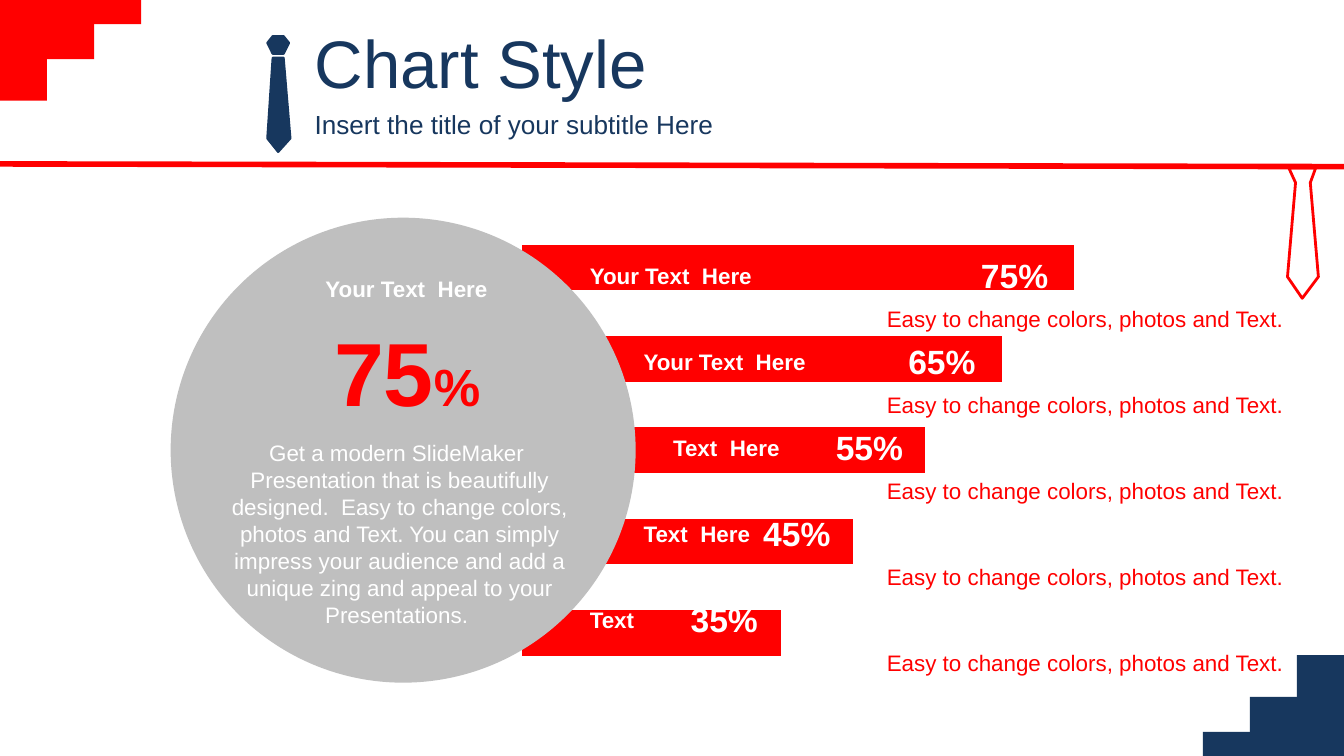
"""Build the chart style slide: a stacked bar chart beside a summary circle."""
from dataclasses import dataclass

from lxml import etree
from pptx import Presentation
from pptx.chart.data import CategoryChartData
from pptx.dml.color import RGBColor
from pptx.enum.chart import XL_CHART_TYPE
from pptx.enum.shapes import MSO_CONNECTOR, MSO_SHAPE
from pptx.enum.text import MSO_ANCHOR, MSO_AUTO_SIZE, PP_ALIGN
from pptx.oxml.ns import qn
from pptx.shapes.autoshape import Shape
from pptx.slide import Slide
from pptx.util import Inches, Pt

LEFT, CENTER = PP_ALIGN.LEFT, PP_ALIGN.CENTER
TOP, MIDDLE = MSO_ANCHOR.TOP, MSO_ANCHOR.MIDDLE
RECTANGLE, OVAL = MSO_SHAPE.RECTANGLE, MSO_SHAPE.OVAL
STRAIGHT = MSO_CONNECTOR.STRAIGHT
BAR_STACKED = XL_CHART_TYPE.BAR_STACKED
NO_AUTOSIZE = MSO_AUTO_SIZE.NONE

COLORS = {"red": "FF0000", "navy": "17375E", "gray": "BFBFBF", "white": "FFFFFF", "black": "000000"}
FONT = "Arial"
SLIDE_WIDTH = 10
SLIDE_HEIGHT = SLIDE_WIDTH * 9 / 16
STEP_WIDTH = 0.35
STEP_HEIGHTS = (0.75, 0.44, 0.18)
ROW_PITCH = 0.64
PERCENT_SHIFT = 0.54
NOTE = "Easy to change colors, photos and Text."
SUMMARY = (
    "Get a modern SlideMaker  Presentation that is beautifully designed.  "
    "Easy to change colors, photos and Text. You can simply impress your "
    "audience and add a unique zing and appeal to your Presentations. "
)
CHART_VALUES = (47, 60, 73, 87, 100)
CHART_LAYOUT = {"xMode": "edge", "yMode": "edge", "x": 0.02, "y": 0.02, "w": 0.9, "h": 0.96}

TIE_KNOT = ((1.99, 0.32), (2.03, 0.27), (2.11, 0.27), (2.15, 0.32), (2.11, 0.4), (2.03, 0.4))
TIE_BLADE = ((2.03, 0.43), (2.11, 0.43), (2.16, 1.03), (2.07, 1.13), (1.99, 1.03))
HANGING_TIE = ((9.59, 1.25), (9.79, 1.25), (9.75, 1.36), (9.81, 2.06),
               (9.69, 2.22), (9.58, 2.06), (9.64, 1.36))


@dataclass(frozen=True)
class Box:
    left: float
    top: float
    width: float
    height: float

    def lengths(self) -> tuple:
        return tuple(Inches(value) for value in (self.left, self.top, self.width, self.height))


@dataclass(frozen=True)
class TextRun:
    text: str
    size: float
    color: str
    bold: bool = False


@dataclass(frozen=True)
class BarRow:
    label: str
    label_left: float
    percent: str


BAR_ROWS = (
    BarRow("Your Text  Here", 4.29, "75%"),
    BarRow("Your Text  Here", 4.69, "65%"),
    BarRow("Text  Here", 4.91, "55%"),
    BarRow("Text  Here", 4.69, "45%"),
    BarRow("Text", 4.29, "35%"),
)


def rgb(name: str) -> RGBColor:
    return RGBColor.from_string(COLORS[name])


def write_text(shape: Shape, runs: tuple, alignment: PP_ALIGN, anchor: MSO_ANCHOR, wrap: bool) -> None:
    frame = shape.text_frame
    frame_format = {"word_wrap": wrap, "auto_size": NO_AUTOSIZE, "vertical_anchor": anchor}
    for name, value in frame_format.items():
        setattr(frame, name, value)
    paragraph = frame.paragraphs[0]
    paragraph.alignment = alignment
    for text_run in runs:
        run = paragraph.add_run()
        run.text = text_run.text
        font_format = {"name": FONT, "size": Pt(text_run.size), "bold": text_run.bold}
        for name, value in font_format.items():
            setattr(run.font, name, value)
        run.font.color.rgb = rgb(text_run.color)


def add_text(slide: Slide, box: Box, *runs: TextRun, alignment: PP_ALIGN = LEFT, wrap: bool = True) -> None:
    write_text(slide.shapes.add_textbox(*box.lengths()), runs, alignment, TOP, wrap)


def fill_placeholder(shape: Shape, box: Box, run: TextRun) -> None:
    for name, value in zip(("left", "top", "width", "height"), box.lengths()):
        setattr(shape, name, value)
    write_text(shape, (run,), LEFT, MIDDLE, True)


def add_solid(slide: Slide, preset: MSO_SHAPE, box: Box, color: str) -> None:
    shape = slide.shapes.add_shape(preset, *box.lengths())
    shape.shadow.inherit = False
    shape.fill.solid()
    shape.fill.fore_color.rgb = rgb(color)
    shape.line.fill.background()


def add_outline(slide: Slide, points: tuple, color: str, width: float, filled: bool) -> None:
    corners = [(Inches(x), Inches(y)) for x, y in points]
    builder = slide.shapes.build_freeform(*corners[0])
    builder.add_line_segments(corners[1:], close=True)
    shape = builder.convert_to_shape()
    shape.shadow.inherit = False
    if filled:
        shape.fill.solid()
        shape.fill.fore_color.rgb = rgb(color)
    else:
        shape.fill.background()
    shape.line.color.rgb = rgb(color)
    shape.line.width = Pt(width)


def add_steps(slide: Slide) -> None:
    for index, height in enumerate(STEP_HEIGHTS):
        left = index * STEP_WIDTH
        right = SLIDE_WIDTH - left - STEP_WIDTH
        add_solid(slide, RECTANGLE, Box(left, 0, STEP_WIDTH, height), "red")
        add_solid(slide, RECTANGLE, Box(right, SLIDE_HEIGHT - height, STEP_WIDTH, height), "navy")


def add_header_line(slide: Slide) -> None:
    line = slide.shapes.add_connector(STRAIGHT, 0, Inches(1.22), Inches(SLIDE_WIDTH), Inches(1.24))
    line.line.color.rgb = rgb("red")
    line.line.width = Pt(3)
    etree.SubElement(line._element.spPr, qn("a:effectLst"))


def add_bar_chart(slide: Slide, box: Box) -> None:
    data = CategoryChartData()
    data.categories = [str(number) for number in range(1, len(CHART_VALUES) + 1)]
    data.add_series("Series 1", CHART_VALUES)
    chart = slide.shapes.add_chart(BAR_STACKED, *box.lengths(), data).chart
    chart.has_legend = chart.has_title = False
    font_format = {"name": FONT, "size": Pt(18)}
    for name, value in font_format.items():
        setattr(chart.font, name, value)
    chart.font.color.rgb = rgb("black")
    axis_format = {"minimum_scale": 0, "maximum_scale": 100, "has_major_gridlines": False, "visible": False}
    for name, value in axis_format.items():
        setattr(chart.value_axis, name, value)
    chart.category_axis.visible = False
    plot_format = {"gap_width": 100, "overlap": 100, "vary_by_categories": False}
    for name, value in plot_format.items():
        setattr(chart.plots[0], name, value)
    bars = chart.plots[0].series[0].format.fill
    bars.solid()
    bars.fore_color.rgb = rgb("red")
    plot_area = chart._chartSpace.chart.plotArea
    for layout in plot_area.findall(qn("c:layout")):
        plot_area.remove(layout)
    layout = etree.Element(qn("c:layout"))
    manual = etree.SubElement(layout, qn("c:manualLayout"))
    etree.SubElement(manual, qn("c:layoutTarget")).set("val", "inner")
    for name, value in CHART_LAYOUT.items():
        etree.SubElement(manual, qn(f"c:{name}")).set("val", str(value))
    plot_area.insert(0, layout)


def add_row(slide: Slide, index: int, row: BarRow) -> None:
    offset = index * ROW_PITCH
    percent_box = Box(7.2 - index * PERCENT_SHIFT, 1.85 + offset, 0.71, 0.4)
    add_text(slide, percent_box, TextRun(row.percent, 18, "white", True), wrap=False)
    add_text(slide, Box(row.label_left, 1.9 + offset, 1.67, 0.3), TextRun(row.label, 12, "white", True))
    add_text(slide, Box(6.5, 2.22 + offset, 3.31, 0.3), TextRun(NOTE, 12, "red"))


def main() -> None:
    presentation = Presentation()
    presentation.slide_width, presentation.slide_height = Inches(SLIDE_WIDTH), Inches(SLIDE_HEIGHT)
    slide = presentation.slides.add_slide(presentation.slide_layouts[0])
    title, subtitle = slide.placeholders
    fill_placeholder(title, Box(2.24, 0.14, 7.76, 0.63), TextRun("Chart Style", 36, "navy"))
    fill_placeholder(subtitle, Box(2.24, 0.77, 7.76, 0.31),
                     TextRun("Insert the title of your subtitle Here", 14, "navy"))
    add_steps(slide)
    for points in (TIE_KNOT, TIE_BLADE):
        add_outline(slide, points, "navy", 1.25, True)
    add_header_line(slide)
    add_outline(slide, HANGING_TIE, "red", 1.5, False)
    add_bar_chart(slide, Box(3.79, 1.58, 4.57, 3.54))
    add_solid(slide, OVAL, Box(1.27, 1.62, 3.46, 3.46), "gray")
    add_text(slide, Box(2.19, 2, 1.67, 0.3), TextRun("Your Text  Here", 12, "white", True), alignment=CENTER)
    add_text(slide, Box(2.38, 2.31, 1.3, 0.91), TextRun("75", 48, "red", True),
             TextRun("%", 28, "red", True), alignment=CENTER, wrap=False)
    add_text(slide, Box(1.44, 3.22, 3.07, 1.51), TextRun(SUMMARY, 12, "white"), alignment=CENTER)
    for index, row in enumerate(BAR_ROWS):
        add_row(slide, index, row)
    presentation.save("out.pptx")


if __name__ == "__main__":
    main()
